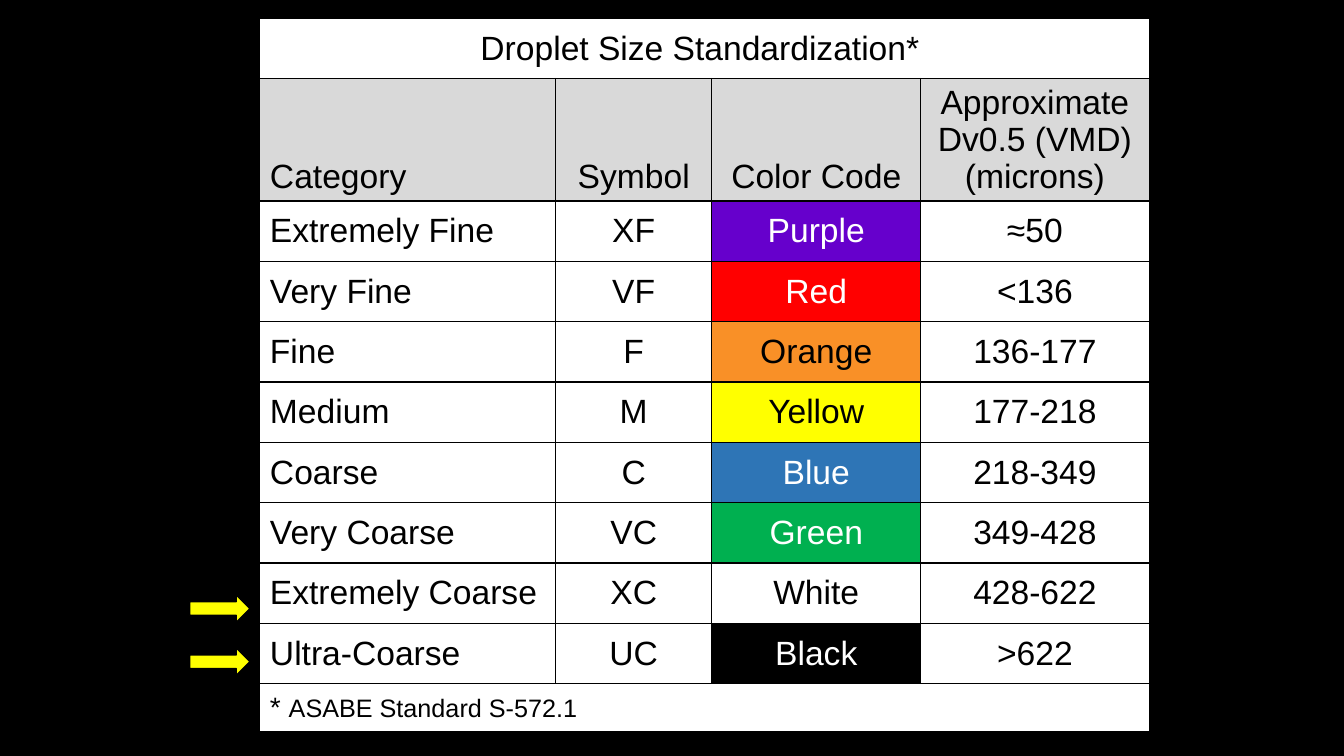
from lxml.etree import SubElement
from pptx import Presentation
from pptx.dml.color import RGBColor
from pptx.enum.shapes import MSO_SHAPE
from pptx.enum.text import MSO_ANCHOR, PP_ALIGN
from pptx.oxml.ns import qn
from pptx.util import Cm, Pt

BLACK = RGBColor(0x00, 0x00, 0x00)
WHITE = RGBColor(0xFF, 0xFF, 0xFF)
GREY = RGBColor(0xD9, 0xD9, 0xD9)
PURPLE = RGBColor(0x66, 0x00, 0xCC)
RED = RGBColor(0xFF, 0x00, 0x00)
ORANGE = RGBColor(0xF9, 0x90, 0x27)
YELLOW = RGBColor(0xFF, 0xFF, 0x00)
BLUE = RGBColor(0x2E, 0x75, 0xB6)
GREEN = RGBColor(0x00, 0xB0, 0x50)

HEADINGS = ("Category", "Symbol", "Color Code", "Approximate\nDv0.5 (VMD)\n(microns)")
CATEGORIES = (
    ("Extremely Fine", "XF", "Purple", "≈50", PURPLE, WHITE),
    ("Very Fine", "VF", "Red", "<136", RED, WHITE),
    ("Fine", "F", "Orange", "136-177", ORANGE, BLACK),
    ("Medium", "M", "Yellow", "177-218", YELLOW, BLACK),
    ("Coarse", "C", "Blue", "218-349", BLUE, WHITE),
    ("Very Coarse", "VC", "Green", "349-428", GREEN, WHITE),
    ("Extremely Coarse", "XC", "White", "428-622", WHITE, BLACK),
    ("Ultra-Coarse", "UC", "Black", ">622", BLACK, WHITE),
)
COLUMN_WIDTHS = (1.6, 7.45, 3.94, 5.26, 5.76)
ROW_HEIGHTS = (1.52, 3.08) + (1.52,) * len(CATEGORIES) + (1.2,)
LAST_ROW = len(ROW_HEIGHTS) - 1
LAST_COLUMN = len(COLUMN_WIDTHS) - 1


class SlideBuilder:
    font_name = "Arial"
    font_size = 24

    def __init__(self, presentation):
        self.slide = presentation.slides.add_slide(presentation.slide_layouts[6])
        background = self.slide.background.fill
        background.solid()
        background.fore_color.rgb = BLACK

    def style_run(self, run, color=BLACK, size=font_size):
        run.font.name = self.font_name
        run.font.size = Pt(size)
        run.font.color.rgb = color

    def add_table(self, left, top):
        frame = self.slide.shapes.add_table(
            len(ROW_HEIGHTS), len(COLUMN_WIDTHS), Cm(left), Cm(top),
            Cm(sum(COLUMN_WIDTHS)), Cm(sum(ROW_HEIGHTS)))
        table = frame.table
        table.first_row = False
        table.horz_banding = False
        for column, width in zip(table.columns, COLUMN_WIDTHS):
            column.width = Cm(width)
        for row, height in zip(table.rows, ROW_HEIGHTS):
            row.height = Cm(height)
        for row in (0, LAST_ROW):
            table.cell(row, 1).merge(table.cell(row, LAST_COLUMN))
        for row in range(len(ROW_HEIGHTS)):
            for column in range(len(COLUMN_WIDTHS)):
                cell = table.cell(row, column)
                self.add_borders(cell, row, column)
                cell.fill.background()
        return table

    def add_borders(self, cell, row, column):
        divided = 0 < row < LAST_ROW
        edges = {
            "a:lnL": divided and column > 1,
            "a:lnR": divided and 0 < column < LAST_COLUMN,
            "a:lnT": column > 0,
            "a:lnB": column > 0 and row < LAST_ROW,
        }
        properties = cell._tc.get_or_add_tcPr()
        for tag, visible in edges.items():
            line = SubElement(properties, qn(tag), w=str(Pt(1)))
            if visible:
                fill = SubElement(line, qn("a:solidFill"))
                SubElement(fill, qn("a:srgbClr"), val=str(BLACK))
            else:
                SubElement(line, qn("a:noFill"))

    def fill_cell(self, cell, text, fill=WHITE, color=BLACK,
                  alignment=PP_ALIGN.CENTER, anchor=MSO_ANCHOR.MIDDLE):
        cell.fill.solid()
        cell.fill.fore_color.rgb = fill
        cell.vertical_anchor = anchor
        cell.text_frame.text = text
        for paragraph in cell.text_frame.paragraphs:
            paragraph.alignment = alignment
            for run in paragraph.runs:
                self.style_run(run, color)

    def add_footnote(self, cell, parts):
        self.fill_cell(cell, "", alignment=PP_ALIGN.LEFT)
        for text, size in parts:
            run = cell.text_frame.paragraphs[0].add_run()
            run.text = text
            self.style_run(run, size=size)

    def add_arrows(self, left, tops, width, height):
        group = self.slide.shapes.add_group_shape()
        for top in tops:
            arrow = group.shapes.add_shape(
                MSO_SHAPE.RIGHT_ARROW, Cm(left), Cm(top), Cm(width), Cm(height))
            arrow.shadow.inherit = False
            arrow.fill.solid()
            arrow.fill.fore_color.rgb = YELLOW
            arrow.line.color.rgb = BLACK
            arrow.line.width = Pt(1)


def main():
    presentation = Presentation()
    presentation.slide_width = Cm(33.87)
    presentation.slide_height = Cm(19.05)
    builder = SlideBuilder(presentation)

    table = builder.add_table(4.95, 0.46)
    builder.fill_cell(table.cell(0, 1), "Droplet Size Standardization* ")
    for column, heading in enumerate(HEADINGS, start=1):
        builder.fill_cell(
            table.cell(1, column), heading, GREY,
            alignment=PP_ALIGN.LEFT if column == 1 else PP_ALIGN.CENTER,
            anchor=MSO_ANCHOR.MIDDLE if column == LAST_COLUMN else MSO_ANCHOR.BOTTOM)
    for row, (category, symbol, color_name, microns, fill, color) in enumerate(CATEGORIES, start=2):
        builder.fill_cell(table.cell(row, 1), category, alignment=PP_ALIGN.LEFT)
        builder.fill_cell(table.cell(row, 2), symbol)
        builder.fill_cell(table.cell(row, 3), color_name, fill, color)
        builder.fill_cell(table.cell(row, 4), microns)
    builder.add_footnote(
        table.cell(LAST_ROW, 1), (("* ", 20), ("ASABE Standard S-572.1", 18)))

    builder.add_arrows(4.78, (14.99, 16.33), 1.52, 0.69)
    presentation.save("out.pptx")


if __name__ == "__main__":
    main()
